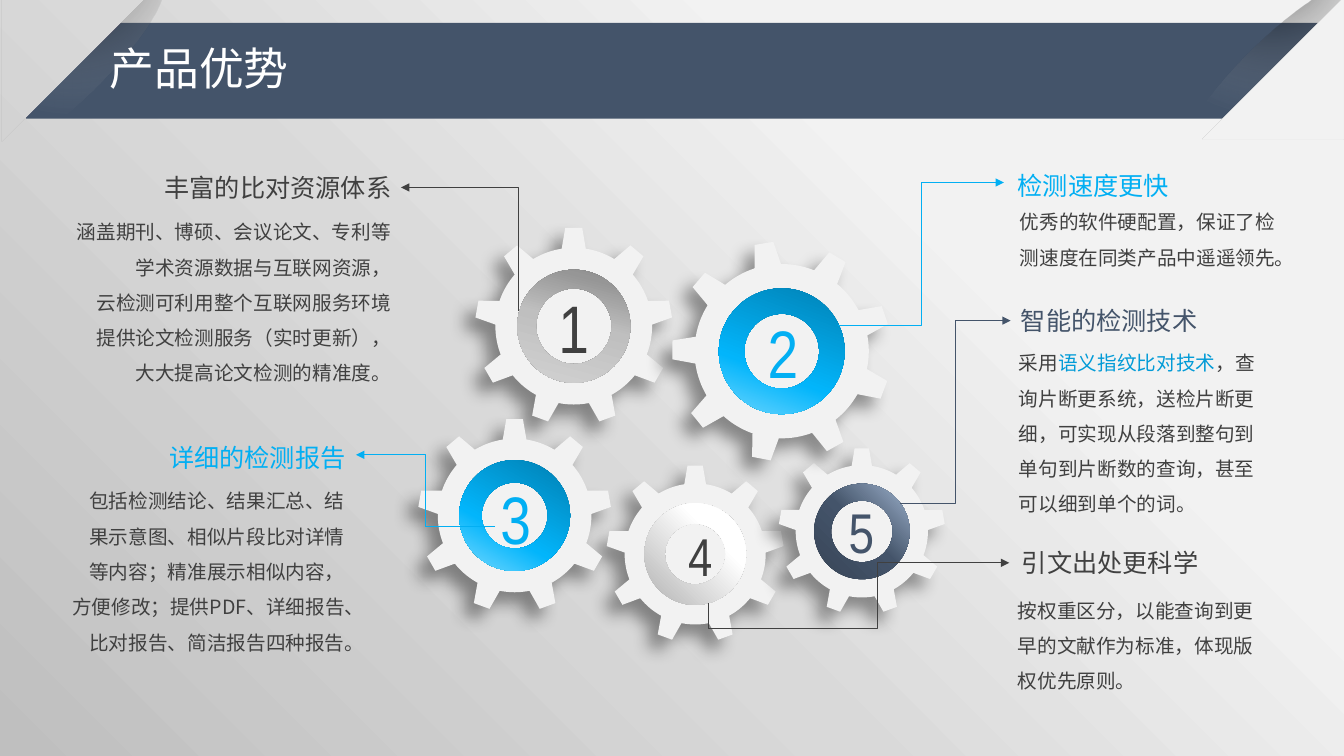
from dataclasses import dataclass

from pptx import Presentation
from pptx.dml.color import RGBColor
from pptx.enum.shapes import MSO_CONNECTOR, MSO_SHAPE
from pptx.enum.text import MSO_AUTO_SIZE, PP_ALIGN
from pptx.oxml import parse_xml
from pptx.oxml.ns import nsdecls, qn
from pptx.util import Cm, Pt

GEAR, DONUT = MSO_SHAPE.GEAR_9, MSO_SHAPE.DONUT
RECT, OVAL, WEDGE = MSO_SHAPE.RECTANGLE, MSO_SHAPE.OVAL, MSO_SHAPE.RIGHT_TRIANGLE
ELBOW = MSO_CONNECTOR.ELBOW
LEFT, MID, RIGHT = PP_ALIGN.LEFT, PP_ALIGN.CENTER, PP_ALIGN.RIGHT
GROW = MSO_AUTO_SIZE.SHAPE_TO_FIT_TEXT


@dataclass(frozen=True)
class Theme:
    ink: str = "404040"
    blue: str = "02AFF3"
    deep: str = "029BD7"
    slate: str = "44546A"
    pale: str = "F2F2F2"
    white: str = "FFFFFF"
    cjk: str = "Noto Sans CJK SC"
    slim: str = "Arial Narrow"
    title: int = 32
    head: int = 18
    body: int = 14


T = Theme()
AIM = '<a:lin ang="18900000" scaled="0"/>'


def focus(l, t, r, b):
    return (f'<a:path path="circle"><a:fillToRect l="{l}000" t="{t}000" '
            f'r="{r}000" b="{b}000"/></a:path>')


CORNER = focus(100, 0, 0, 100)
SKY = ([(0, "0175A3"), (61, "02B5FB"), (85, "61D2FE")], AIM)
GRAY = ([(0, "6F6F6F"), (23, "969696"), (48, "BFBFBF"), (100, "D9D9D9")], AIM)
SNOW = ([(0, "FFFFFF"), (35, "FFFFFF"), (100, "A6A6A6")], CORNER)
NAVY = ([(0, "D6DCE5"), (24, "8497B0"), (49, "44546A"), (100, "333F50")], CORNER)
PAPER = ([(9, "F2F2F2"), (29, "F2F2F2"), (59, "D9D9D9"), (100, "BFBFBF")], CORNER)
SHADE = ([(0, "404040", 40), (32, "000000", 30), (100, "E7E6E6", 0)],
         focus(50, -80, 50, 180))

GEARS = [
    (15.27, 11.71, 4.5, 0, 165, 0.202, SNOW),
    (11.96, 5.72, 5, 0, 150, 0.166, GRAY),
    (10.52, 10.54, 4.9, 0, 165, 0.202, SKY),
    (19.61, 11.28, 4.22, 0, 144.8, 0.177, NAVY),
    (16.92, 6.07, 5.56, 350.7, 155.7, 0.202, SKY),
]
LINKS = [
    ((10.03, 4.8, 3.12, 2.97), T.ink, 2, {"rot": "16200000", "flipV": "1"}, ()),
    ((8.97, 11.46, 3.51, 1.8), T.blue, 3, {"rot": "10800000"}, (50000,)),
    ((21.13, 10.9, 1.02, 7.59), T.ink, 4,
     {"rot": "5400000", "flipH": "1", "flipV": "1"}, (-62500, 56200)),
    ((22.68, 8.08, 2.79, 4.6), T.slate, 3, {"flipV": "1"}, (50000,)),
    ((21.13, 4.6, 4.17, 3.61), T.blue, 3, {"flipV": "1"}, (50000,)),
]
DIGITS = [
    ("1", (13.82, 7.09, 1.17, 2.31), 48, T.ink),
    ("2", (19.02, 7.72, 1.42, 2.31), 48, T.blue),
    ("3", (12.29, 11.91, 1.42, 2.31), 48, T.blue),
    ("4", (17.09, 13.06, 0.94, 1.88), 38, T.ink),
    ("5", (21.06, 12.4, 1.3, 1.96), 40, T.slate),
]
HEADS = [
    ("丰富的比对资源体系", (3.84, 4.22, 6.27, 1.02), T.ink, RIGHT),
    ("检测速度更快", (25.4, 4.17, 4.37, 1.02), T.blue, LEFT),
    ("详细的检测报告", (3.96, 11.02, 5, 1.02), T.blue, RIGHT),
    ("引文出处更科学", (25.45, 13.67, 5, 1.02), T.ink, RIGHT),
    ("智能的检测技术", (25.48, 7.57, 5, 1.02), T.slate, LEFT),
]
NOTES = [
    ((0.79, 5.13, 9.32, 4.75), RIGHT, [
        [("涵盖期刊、博硕、会议论文、专利等", T.ink)],
        [("学术资源数据与互联网资源，", T.ink)],
        [("云检测可利用整个互联网服务环境", T.ink)],
        [("提供论文检测服务（实时更新），", T.ink)],
        [("大大提高论文检测的精准度。", T.ink)]]),
    ((25.45, 4.88, 6.96, 2.06), LEFT, [
        [("优秀的软件硬配置，保证了检测速度在同类产品中遥遥领先。", T.ink)]]),
    ((1.55, 11.91, 7.39, 4.65), RIGHT, [
        [("包括检测结论、结果汇总、结果示意图、相似片段比对详情等内容；精准展示相似内容，"
          "方便修改；提供PDF、详细报告、比对报告、简洁报告四种报告。", T.ink)]]),
    ((25.4, 14.66, 6.63, 2.95), LEFT, [
        [("按权重区分，以能查询到更早的文献作为标准，体现版权优先原则。", T.ink)]]),
    ((25.43, 8.43, 6.81, 4.75), LEFT, [
        [("采用", T.ink), ("语义指纹比对技术", T.deep),
         ("，查询片断更系统，送检片断更细，可实现从段落到整句到单句到片断数的查询，"
          "甚至可以细到单个的词。", T.ink)]]),
]


def put(item, form):
    for key, val in form.items():
        setattr(item, key, val)


def node(xml):
    tag, rest = xml.split(" ", 1)
    return parse_xml(f"{tag} {nsdecls('a')} {rest}")


def blend(props, tint):
    stops, aim = tint
    marks = "".join(
        f'<a:gs pos="{pos}000"><a:srgbClr val="{hue}">'
        + "".join(f'<a:alpha val="{part}000"/>' for part in clear)
        + "</a:srgbClr></a:gs>" for pos, hue, *clear in stops)
    props.replace(props.find(qn("a:solidFill")), node(
        f'<a:gradFill rotWithShape="1"><a:gsLst>{marks}</a:gsLst>{aim}</a:gradFill>'))


def shape(home, kind, box, fill=None, turn=0, bend=()):
    item = home.add_shape(kind, *map(Cm, box))
    item.rotation = turn
    item.shadow.inherit = False
    item.line.fill.background()
    for spot, val in enumerate(bend):
        item.adjustments[spot] = val
    if fill is None:
        item.element.set("useBgFill", "1")
    else:
        item.fill.solid()
        if isinstance(fill, str):
            item.fill.fore_color.rgb = RGBColor.from_string(fill)
        else:
            blend(item.element.spPr, fill)
    return item


def gear(slide, left, top, size, turn, spin, hole, tint):
    home = slide.shapes.add_group_shape().shapes
    wheel = shape(home, GEAR, (left, top, size, size), T.pale, turn, (0.105, 0.018))
    wheel.element.spPr.find(qn("a:effectLst")).append(node(
        f'<a:outerShdw blurRad="{Pt(12)}" dist="{Pt(11)}" dir="8100000" algn="tr" '
        'rotWithShape="0"><a:srgbClr val="000000"><a:alpha val="40000"/>'
        '</a:srgbClr></a:outerShdw>'))
    ring = size * 0.57
    edge = (size - ring) / 2
    shape(home, DONUT, (left + edge, top + edge, ring, ring), tint, spin, (hole,))


def link(slide, box, hue, bends, pose, bend):
    left, top, wide, high = box
    item = slide.shapes.add_connector(
        ELBOW, *map(Cm, (left, top, left + wide, top + high)))
    put(item.line, {"width": Pt(0.5)})
    item.line.color.rgb = RGBColor.from_string(hue)
    props = item.element.spPr
    for key, val in pose.items():
        props.find(qn("a:xfrm")).set(key, val)
    guides = "".join(f'<a:gd name="adj{spot}" fmla="val {val}"/>'
                     for spot, val in enumerate(bend, 1))
    props.replace(props.find(qn("a:prstGeom")), node(
        f'<a:prstGeom prst="bentConnector{bends}"><a:avLst>{guides}</a:avLst></a:prstGeom>'))
    props.find(qn("a:ln")).append(node('<a:tailEnd type="triangle"/>'))
    props.append(node("<a:effectLst />"))


def text(slide, box, lines, size, face=T.cjk, align=LEFT, gap=1.0, wrap=False):
    frame = slide.shapes.add_textbox(*map(Cm, box)).text_frame
    put(frame, {"word_wrap": wrap, "auto_size": GROW})
    for spot, parts in enumerate(lines):
        para = frame.add_paragraph() if spot else frame.paragraphs[0]
        put(para, {"alignment": align, "line_spacing": gap})
        for words, hue in parts:
            run = para.add_run()
            run.text = words
            put(run.font, {"size": Pt(size), "name": face})
            run.font.color.rgb = RGBColor.from_string(hue)
            run.font._element.append(node(f'<a:ea typeface="{face}"/>'))


def banner(slide):
    home = slide.shapes
    shape(home, RECT, (0.66, 0.58, 33.2, 2.41), T.slate)
    for left, top, tilt, side, rise, turn in [
            (-1.3, 0.99, 315.5, 0.05, 0, 90), (28.93, 1.04, 135.5, 30.3, -0.05, 270)]:
        fold = home.add_group_shape().shapes
        shape(fold, OVAL, (left, top, 6.27, 1.5), SHADE, tilt)
        shape(fold, WEDGE, (side, rise, 3.56, 3.56), None, turn)
    text(slide, (2.51, 0.91, 5.08, 1.63), [[("产品优势", T.white)]], T.title)


def main():
    deck = Presentation()
    put(deck, {"slide_width": Cm(33.87), "slide_height": Cm(19.05)})
    slide = deck.slides.add_slide(deck.slide_layouts[6])
    slide.background.fill.solid()
    blend(next(slide.element.iter(qn("p:bgPr"))), PAPER)
    for row in GEARS:
        gear(slide, *row)
    for row in LINKS:
        link(slide, *row)
    for words, box, size, hue in DIGITS:
        text(slide, box, [[(words, hue)]], size, T.slim, MID)
    for words, box, hue, align in HEADS:
        text(slide, box, [[(words, hue)]], T.head, align=align)
    for box, align, lines in NOTES:
        text(slide, box, lines, T.body, align=align, gap=1.5, wrap=True)
    banner(slide)
    deck.save("out.pptx")


if __name__ == "__main__":
    main()
